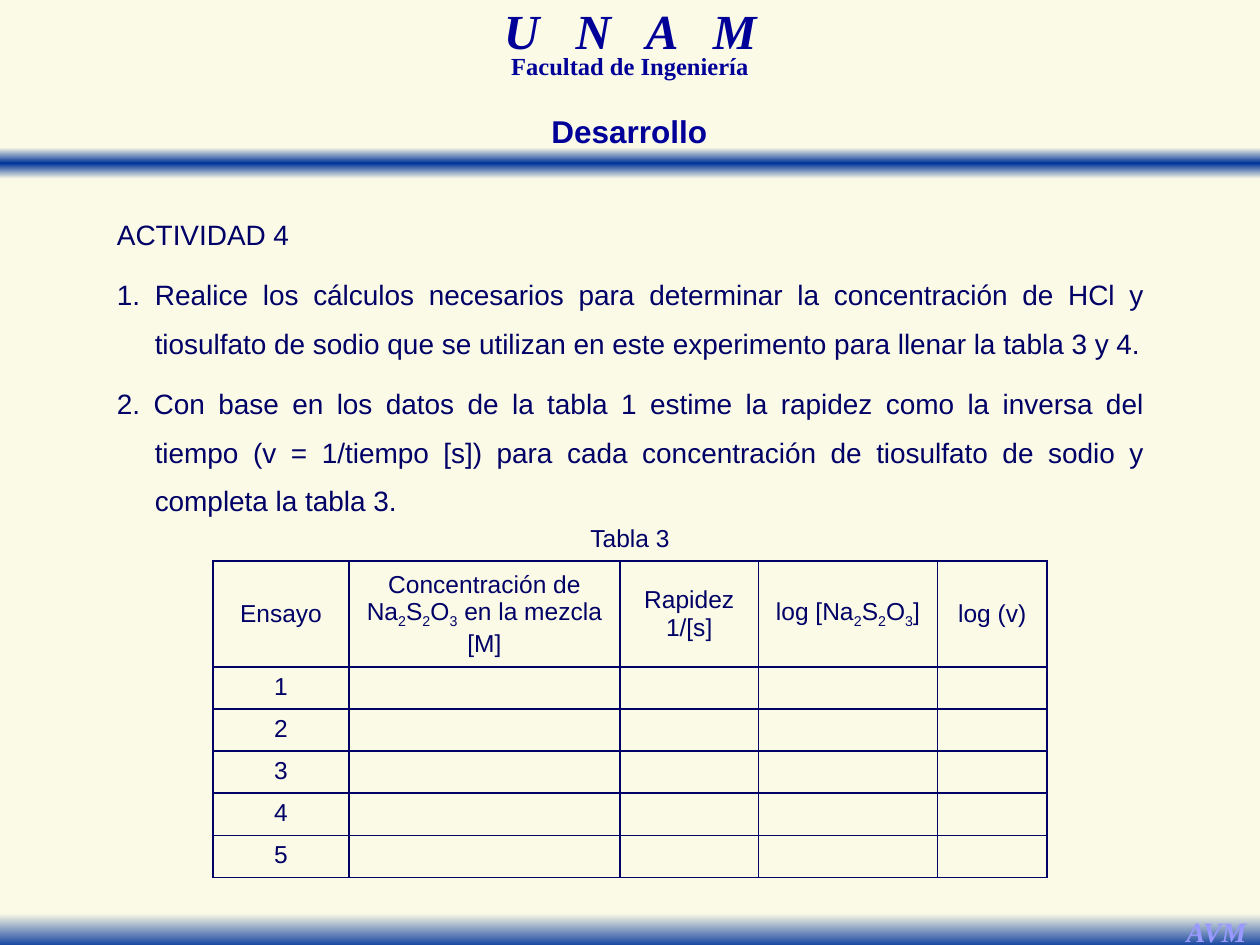
from itertools import product

from lxml.etree import SubElement
from pptx import Presentation
from pptx.dml.color import RGBColor
from pptx.enum.shapes import MSO_SHAPE as Shape
from pptx.enum.text import MSO_ANCHOR as Anchor, MSO_AUTO_SIZE as AutoSize, PP_ALIGN as Align
from pptx.oxml.ns import qn
from pptx.util import Inches, Pt

CREAM = RGBColor(0xFA, 0xFA, 0xE6)
BLUE = RGBColor(0x00, 0x33, 0x99)
HEADING = RGBColor(0x00, 0x00, 0x99)
NAVY = RGBColor(0x00, 0x00, 0x66)
LILAC = RGBColor(0x99, 0x99, 0xFF)

SERIF = {"name": "Times New Roman", "bold": True}
CREST = {**SERIF, "size": Pt(28), "italic": True}
FACULTY = {**SERIF, "size": Pt(14), "italic": False}
INITIALS = {**SERIF, "size": Pt(16), "italic": True}
TITLE = {"name": "Arial", "size": Pt(18), "bold": True}
BODY = {"name": "Arial", "size": Pt(16)}
CELL = {"name": "Arial", "size": Pt(14)}

STEPS = [
    "ACTIVIDAD 4",
    "1. Realice los cálculos necesarios para determinar la concentración de HCl y "
    "tiosulfato de sodio que se utilizan en este experimento para llenar la tabla 3 y 4.",
    "2. Con base en los datos de la tabla 1 estime la rapidez como la inversa del "
    "tiempo (v = 1/tiempo [s]) para cada concentración de tiosulfato de sodio y "
    "completa la tabla 3.",
]
# Odd pieces between underscores are subscripts
FORMULA = "Na_2_S_2_O_3_"
HEADERS = [
    ["Ensayo"],
    [f"Concentración de {FORMULA} en la mezcla", "[M]"],
    ["Rapidez", "1/[s]"],
    [f"log [{FORMULA}]"],
    ["log (v)"],
]
TRIALS = 5
COLUMN_WIDTHS = [1.08, 2.15, 1.1, 1.42, 0.87]
ROW_HEIGHTS = [0.33, 0.84] + [0.33] * TRIALS


def set_format(target, values):
    for name, value in values.items():
        setattr(target, name, value)


def add_span(para, text, style, color):
    span = para.add_run()
    span.text = text
    set_format(span.font, style)
    span.font.color.rgb = color
    return span


def add_text_box(page, area, wrap=True):
    box = page.shapes.add_textbox(*map(Inches, area))
    box.text_frame.word_wrap = wrap
    return box.text_frame


def add_band(page, area, stops):
    """Full-width bar with a vertical gradient of (percent, colour) stops."""
    band = page.shapes.add_shape(Shape.RECTANGLE, *map(Inches, area))
    band.shadow.inherit = False
    band.line.fill.background()
    gradient = SubElement(band._element.spPr, qn("a:gradFill"), rotWithShape="1")
    stop_list = SubElement(gradient, qn("a:gsLst"))
    for percent, color in stops:
        stop = SubElement(stop_list, qn("a:gs"), pos=str(percent * 1000))
        SubElement(stop, qn("a:srgbClr"), val=str(color))
    SubElement(gradient, qn("a:lin"), ang="5400000", scaled="1")
    band._element.spPr.find(qn("a:prstGeom")).addnext(gradient)


def add_header(page, area):
    left, top, width, height = area
    add_band(page, (left, top + 1.17, width, 0.25), [(0, CREAM), (50, BLUE), (100, CREAM)])

    # University and faculty, the letters spread by character spacing
    crest = add_text_box(page, (left + 3.04, top + 0.08, 3.92, 0.43)).paragraphs[0]
    spread = add_span(crest, "U N A ", CREST, HEADING)
    spread.font._element.set("spc", "700")
    add_span(crest, "M", CREST, HEADING)
    faculty = add_text_box(page, (left + 3.21, top + 0.42, 3.58, 0.26)).paragraphs[0]
    add_span(faculty, "Facultad de Ingeniería", FACULTY, HEADING)
    for para in (crest, faculty):
        set_format(para, {"alignment": Align.CENTER, "line_spacing": 0.7})

    # Slide title
    title = page.shapes.title
    set_format(title, {"left": Inches(left + 2.83), "top": Inches(top + 0.84),
                       "width": Inches(4.33), "height": Inches(0.4)})
    set_format(title.text_frame, {"vertical_anchor": Anchor.TOP, "word_wrap": True,
                                  "auto_size": AutoSize.NONE})
    para = title.text_frame.paragraphs[0]
    para.alignment = Align.CENTER
    add_span(para, "Desarrollo", TITLE, HEADING)


def add_footer(page, area):
    left, top, width, height = area
    add_band(page, area, [(0, CREAM), (100, BLUE)])
    para = add_text_box(page, (left + width - 0.69, top - 0.04, 0.69, 0.37), wrap=False).paragraphs[0]
    para.alignment = Align.CENTER
    add_span(para, "AVM", INITIALS, LILAC)


def add_steps(page, area):
    frame = add_text_box(page, area)
    for index, text in enumerate(STEPS):
        para = frame.add_paragraph() if index else frame.paragraphs[0]
        set_format(para, {"alignment": Align.JUSTIFY, "line_spacing": 1.45, "space_after": Pt(6.5)})
        if index:
            para._p.get_or_add_pPr().set("marL", str(Inches(0.3)))
            para._p.get_or_add_pPr().set("indent", str(Inches(-0.3)))
        add_span(para, text, BODY, NAVY)


def set_borders(cell, visible_sides):
    properties = cell._tc.get_or_add_tcPr()
    for side in "LRTB":
        line = SubElement(properties, qn(f"a:ln{side}"), w=str(Pt(1)))
        if side in visible_sides:
            fill = SubElement(line, qn("a:solidFill"))
            SubElement(fill, qn("a:srgbClr"), val=str(NAVY))
        else:
            SubElement(line, qn("a:noFill"))


def fill_cell(cell, lines, anchor):
    cell.vertical_anchor = anchor
    frame = cell.text_frame
    for index, line in enumerate(lines):
        para = frame.add_paragraph() if index else frame.paragraphs[0]
        para.alignment = Align.CENTER
        for order, piece in enumerate(line.split("_")):
            if piece:
                span = add_span(para, piece, CELL, NAVY)
                if order % 2:
                    span.font._element.set("baseline", "-25000")
    if not lines:
        # Keeps an empty row as low as a filled one
        SubElement(frame.paragraphs[0]._p, qn("a:endParaRPr"), sz="1400")


def add_results_table(page, area):
    rows, columns = len(ROW_HEIGHTS), len(COLUMN_WIDTHS)
    table = page.shapes.add_table(rows, columns, *map(Inches, area)).table
    set_format(table, {"first_row": False, "horz_banding": False})
    for column, width in zip(table.columns, COLUMN_WIDTHS):
        column.width = Inches(width)
    for row, height in zip(table.rows, ROW_HEIGHTS):
        row.height = Inches(height)

    for row, column in product(range(rows), range(columns)):
        cell = table.cell(row, column)
        set_borders(cell, "LRTB" if row else "B")
        cell.fill.solid()
        cell.fill.fore_color.rgb = CREAM
        if row == 1:
            fill_cell(cell, HEADERS[column], Anchor.MIDDLE)
        else:
            label = str(row - 1) if row else "Tabla 3"
            fill_cell(cell, [] if column else [label], Anchor.TOP)
    table.cell(0, 0).merge(table.cell(0, columns - 1))


def main():
    deck = Presentation()
    set_format(deck, {"slide_width": Inches(10), "slide_height": Inches(7.5)})
    page = deck.slides.add_slide(deck.slide_layouts[5])
    page.background.fill.solid()
    page.background.fill.fore_color.rgb = CREAM

    add_header(page, (0, 0, 10, 1.42))
    add_footer(page, (0, 7.25, 10, 0.28))
    add_steps(page, (0.83, 1.56, 8.35, 2.58))
    add_results_table(page, (1.69, 4.12, sum(COLUMN_WIDTHS), sum(ROW_HEIGHTS)))
    deck.save("out.pptx")


if __name__ == "__main__":
    main()
